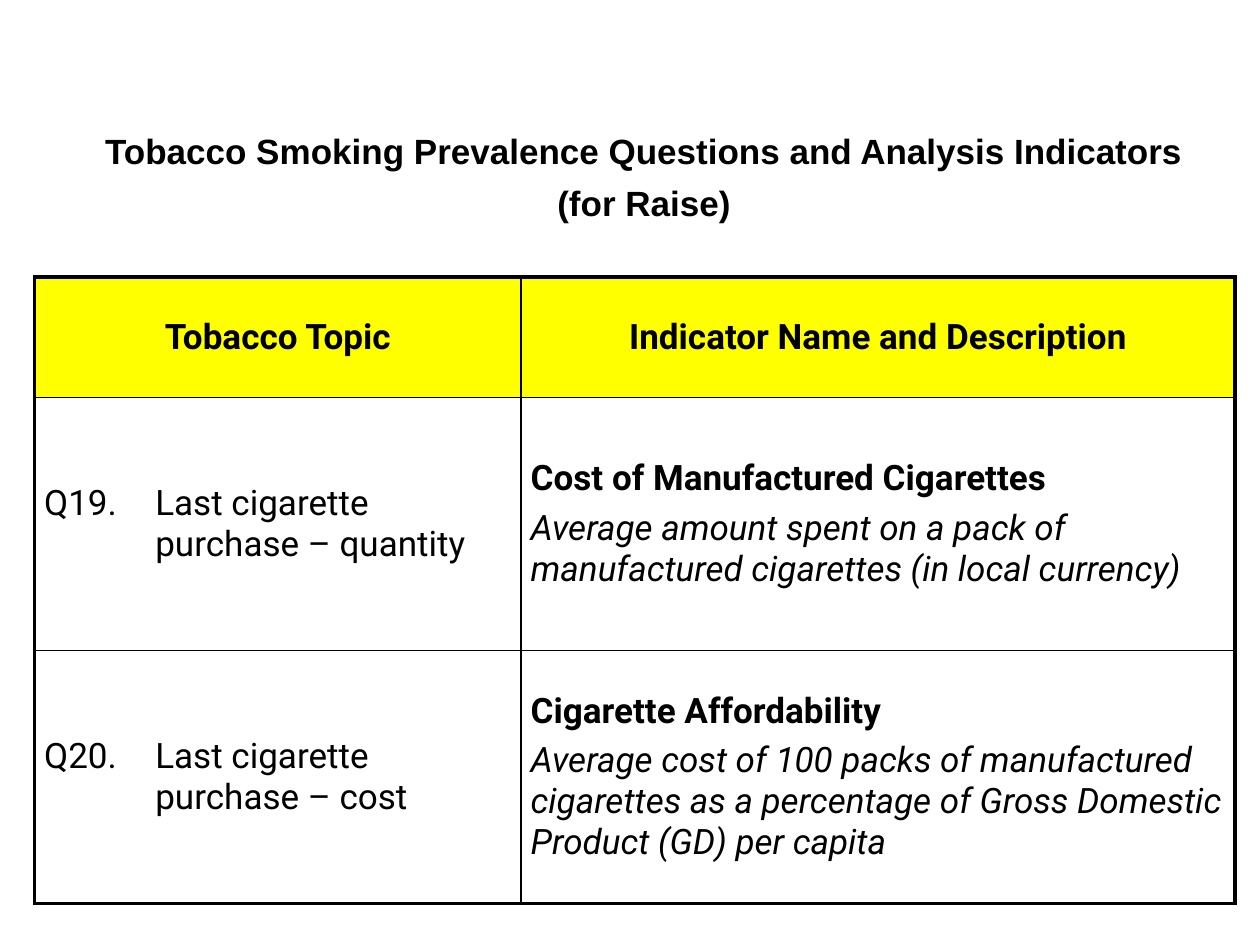
from dataclasses import dataclass

from lxml.etree import SubElement
from pptx import Presentation
from pptx.dml.color import RGBColor
from pptx.enum.text import MSO_ANCHOR, MSO_AUTO_SIZE, PP_ALIGN
from pptx.oxml.ns import qn
from pptx.util import Pt


@dataclass(frozen=True)
class Theme:
    ink: RGBColor = RGBColor(0, 0, 0)
    header: RGBColor = RGBColor(255, 255, 0)
    title_font: str = "Arial"
    table_font: str = "Roboto"
    size: Pt = Pt(20)
    outer_rule: Pt = Pt(2.25)
    inner_rule: Pt = Pt(1)


@dataclass(frozen=True)
class Box:
    left: Pt
    top: Pt
    width: Pt
    height: Pt


THEME = Theme()
TITLE = ["Tobacco Smoking Prevalence Questions and Analysis Indicators", "(for Raise)"]
HEADINGS = ["Tobacco Topic", "Indicator Name and Description"]
QUESTIONS = [
    (
        "Q19.\tLast cigarette purchase – quantity",
        "Cost of Manufactured Cigarettes",
        "Average amount spent on a pack of manufactured cigarettes (in local currency)",
    ),
    (
        "Q20.\tLast cigarette purchase – cost",
        "Cigarette Affordability",
        "Average cost of 100 packs of manufactured cigarettes as a percentage of "
        "Gross Domestic Product (GD) per capita",
    ),
]


def set_margins(holder, side, end):
    holder.margin_left = holder.margin_right = side
    holder.margin_top = holder.margin_bottom = end


def write_paragraph(paragraph, text, face, bold=False, italic=False, align=PP_ALIGN.LEFT):
    paragraph.text = text
    paragraph.alignment = align
    font = paragraph.font
    font.name, font.size = face, THEME.size
    font.bold, font.italic = bold, italic
    font.color.rgb = THEME.ink


def add_title(slide, box):
    title = slide.shapes.title
    title.left, title.top = box.left, box.top
    title.width, title.height = box.width, box.height
    frame = title.text_frame
    frame.word_wrap = True
    frame.auto_size = MSO_AUTO_SIZE.NONE
    frame.vertical_anchor = MSO_ANCHOR.MIDDLE
    set_margins(frame, Pt(1.5), Pt(0.75))
    heading, purpose = frame.paragraphs[0], frame.add_paragraph()
    for paragraph, text in zip((heading, purpose), TITLE):
        write_paragraph(paragraph, text, THEME.title_font, bold=True, align=PP_ALIGN.CENTER)
    purpose.space_before = Pt(5.8)


def rule_cell(cell, outer_sides):
    properties = cell._tc.get_or_add_tcPr()
    for side in "LRTB":
        width = THEME.outer_rule if side in outer_sides else THEME.inner_rule
        line = SubElement(properties, qn(f"a:ln{side}"), w=str(int(width)))
        fill = SubElement(line, qn("a:solidFill"))
        SubElement(fill, qn("a:srgbClr"), val=str(THEME.ink))


def write_question(cell, question):
    paragraph = cell.text_frame.paragraphs[0]
    properties = paragraph._p.get_or_add_pPr()
    properties.set("marL", str(int(Pt(63.5))))
    properties.set("indent", str(int(Pt(-63.5))))
    write_paragraph(paragraph, question, THEME.table_font)


def write_indicator(cell, name, description):
    frame = cell.text_frame
    write_paragraph(frame.paragraphs[0], name, THEME.table_font, bold=True)
    detail = frame.add_paragraph()
    write_paragraph(detail, description, THEME.table_font, italic=True)
    detail.space_before = Pt(4.7)


def add_indicator_table(slide, box):
    row_count = len(QUESTIONS) + 1
    table = slide.shapes.add_table(
        row_count, 2, box.left, box.top, box.width, box.height
    ).table
    table.first_row = table.horz_banding = False
    topic_width, header_height = Pt(278), Pt(69)
    table.columns[0].width = topic_width
    table.columns[1].width = box.width - topic_width
    table.rows[0].height = header_height
    for row in range(1, row_count):
        table.rows[row].height = (box.height - header_height) // len(QUESTIONS)

    for row in range(row_count):
        for column in range(2):
            cell = table.cell(row, column)
            outer_sides = "LR"[column]
            if row == 0:
                outer_sides += "T"
            if row == row_count - 1:
                outer_sides += "B"
            rule_cell(cell, outer_sides)
            cell.vertical_anchor = MSO_ANCHOR.MIDDLE
            set_margins(cell, Pt(5.5), Pt(1.5))
            if row == 0:
                cell.fill.solid()
                cell.fill.fore_color.rgb = THEME.header
            else:
                cell.fill.background()

    for column, heading in enumerate(HEADINGS):
        paragraph = table.cell(0, column).text_frame.paragraphs[0]
        write_paragraph(
            paragraph, heading, THEME.table_font, bold=True, align=PP_ALIGN.CENTER
        )
    for row, (question, name, description) in enumerate(QUESTIONS, start=1):
        write_question(table.cell(row, 0), question)
        write_indicator(table.cell(row, 1), name, description)


def main():
    presentation = Presentation()
    presentation.slide_width, presentation.slide_height = Pt(720), Pt(540)
    slide = presentation.slides.add_slide(presentation.slide_layouts[5])
    add_title(slide, Box(Pt(36.5), Pt(73), Pt(663), Pt(55.5)))
    add_indicator_table(slide, Box(Pt(19.75), Pt(158.25), Pt(686), Pt(358)))
    presentation.save("out.pptx")


if __name__ == "__main__":
    main()
